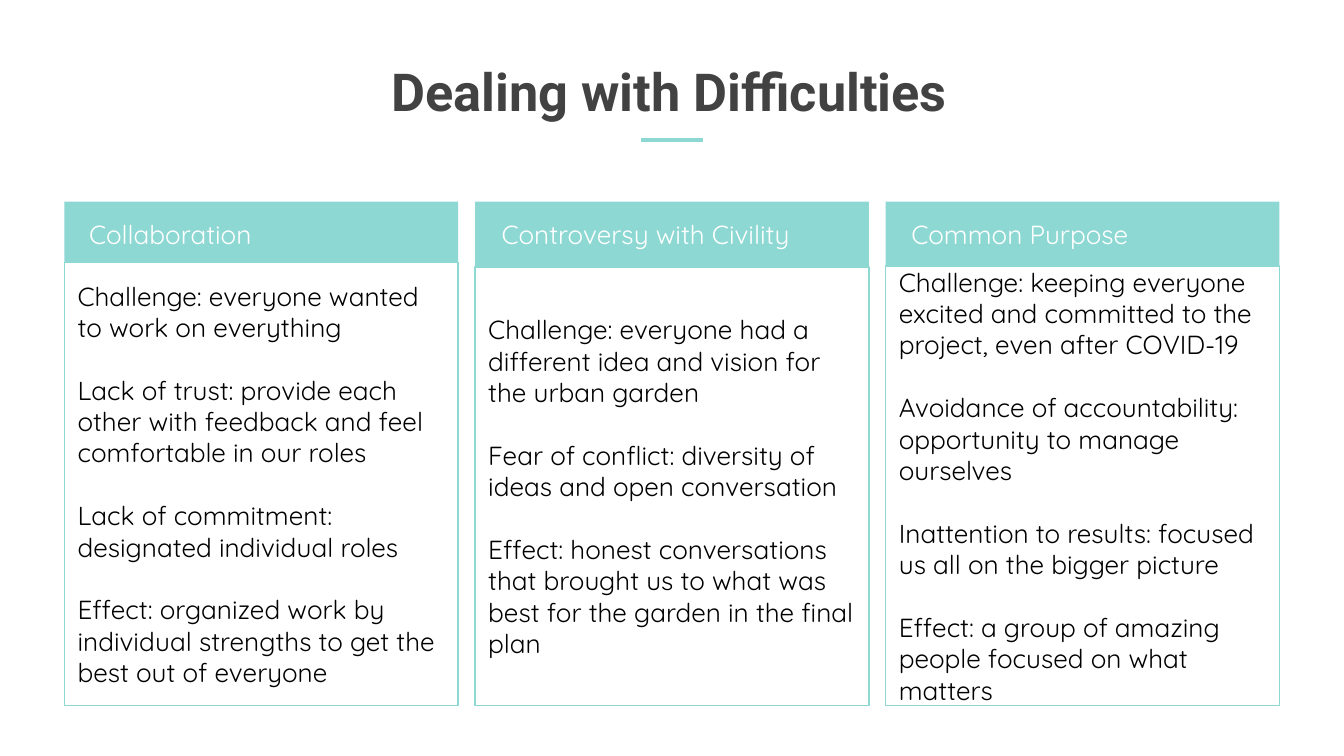
from lxml.etree import SubElement
from pptx import Presentation
from pptx.dml.color import RGBColor
from pptx.enum.shapes import MSO_CONNECTOR, MSO_SHAPE
from pptx.enum.text import MSO_ANCHOR, MSO_AUTO_SIZE, PP_ALIGN
from pptx.oxml.ns import qn
from pptx.util import Pt

COLORS = {name: RGBColor.from_string(value) for name, value in {
    "teal": "8DD8D3",
    "title": "424242",
    "text": "000000",
    "heading": "FFFFFF",
}.items()}

# Column geometry, in points
COLUMN_LEFT, COLUMN_PITCH, COLUMN_WIDTH = 34.5, 220, 211
HEADER_TOP, PANEL_BOTTOM = 108, 378

# Heading, heading left, header bottom, paragraphs
COLUMNS = [
    ("Collaboration", 40.5, 140.5, [
        "Challenge: everyone wanted to work on everything",
        "Lack of trust: provide each other with feedback and feel comfortable in our roles",
        "Lack of commitment: designated individual roles",
        "Effect: organized work by individual strengths to get the best out of everyone",
    ]),
    ("Controversy with Civility", 261.5, 143, [
        "Challenge: everyone had a different idea and vision for the urban garden",
        "Fear of conflict: diversity of ideas and open conversation",
        "Effect: honest conversations that brought us to what was best for the garden "
        "in the final plan",
    ]),
    ("Common Purpose", 481, 142.5, [
        "Challenge: keeping everyone excited and committed to the project, even after COVID-19",
        "Avoidance of accountability: opportunity to manage ourselves",
        "Inattention to results: focused us all on the bigger picture",
        "Effect: a group of amazing people focused on what matters",
    ]),
]


def write_text(shape, lines, font_name, size, color, anchor, align=PP_ALIGN.LEFT,
               bold=False, gap=0, line_spacing=1.0):
    frame = shape.text_frame
    frame.text = "\n".join(lines)
    frame.word_wrap = True
    frame.auto_size = MSO_AUTO_SIZE.NONE
    frame.vertical_anchor = anchor
    frame.margin_left = frame.margin_right = Pt(7.2)
    frame.margin_top = frame.margin_bottom = Pt(7.2)
    for paragraph in frame.paragraphs:
        paragraph.alignment = align
        paragraph.line_spacing = line_spacing
        paragraph.space_before = Pt(0)
        paragraph.space_after = Pt(gap)
        for run in paragraph.runs:
            run.font.name = font_name
            run.font.size = Pt(size)
            run.font.bold = bold
            run.font.color.rgb = COLORS[color]
    frame.paragraphs[-1].space_after = Pt(0)


def place(shape, left, top, width, height):
    shape.left, shape.top = Pt(left), Pt(top)
    shape.width, shape.height = Pt(width), Pt(height)


presentation = Presentation()
presentation.slide_width, presentation.slide_height = Pt(720), Pt(405)
slide = presentation.slides.add_slide(presentation.slide_layouts.get_by_name("Comparison"))
title, *headings, spare = slide.placeholders
spare.element.getparent().remove(spare.element)

# Title with accent line
place(title, 190, 24.5, 337, 40.5)
write_text(title, ["Dealing with Difficulties"], "Roboto", 28, "title",
           MSO_ANCHOR.TOP, PP_ALIGN.CENTER, bold=True)
accent = slide.shapes.add_connector(MSO_CONNECTOR.STRAIGHT, Pt(343.5), Pt(75), Pt(376.5), Pt(75))
accent.line.color.rgb = COLORS["teal"]
accent.line.width = Pt(2.25)
SubElement(accent.element.spPr, qn("a:effectLst"))

# Columns
for index, (heading_text, heading_left, header_bottom, lines) in enumerate(COLUMNS):
    left = COLUMN_LEFT + index * COLUMN_PITCH
    group = slide.shapes.add_group_shape()

    # Outlined panel
    panel = group.shapes.add_shape(
        MSO_SHAPE.RECTANGLE, Pt(left), Pt(header_bottom),
        Pt(COLUMN_WIDTH), Pt(PANEL_BOTTOM - header_bottom))
    panel.shadow.inherit = False
    panel.fill.background()
    panel.line.color.rgb = COLORS["teal"]
    panel.line.width = Pt(0.75)
    write_text(panel, lines, "Quicksand", 14, "text", MSO_ANCHOR.MIDDLE, gap=16.8)

    # Filled header
    header = group.shapes.add_shape(
        MSO_SHAPE.RECTANGLE, Pt(left), Pt(HEADER_TOP),
        Pt(COLUMN_WIDTH), Pt(header_bottom - HEADER_TOP))
    header.shadow.inherit = False
    header.fill.solid()
    header.fill.fore_color.rgb = COLORS["teal"]
    header.line.fill.background()

    # Heading, brought in front of the header
    heading = headings[index]
    place(heading, heading_left, 107.5, 196, 32.5)
    write_text(heading, [heading_text], "Quicksand", 14, "heading",
               MSO_ANCHOR.TOP, line_spacing=1.15)
    properties = heading.text_frame.paragraphs[0]._p.get_or_add_pPr()
    properties.set("marL", "0")
    properties.set("indent", "0")
    SubElement(properties, qn("a:buNone"))
    heading.element.getparent().append(heading.element)

presentation.save("out.pptx")
